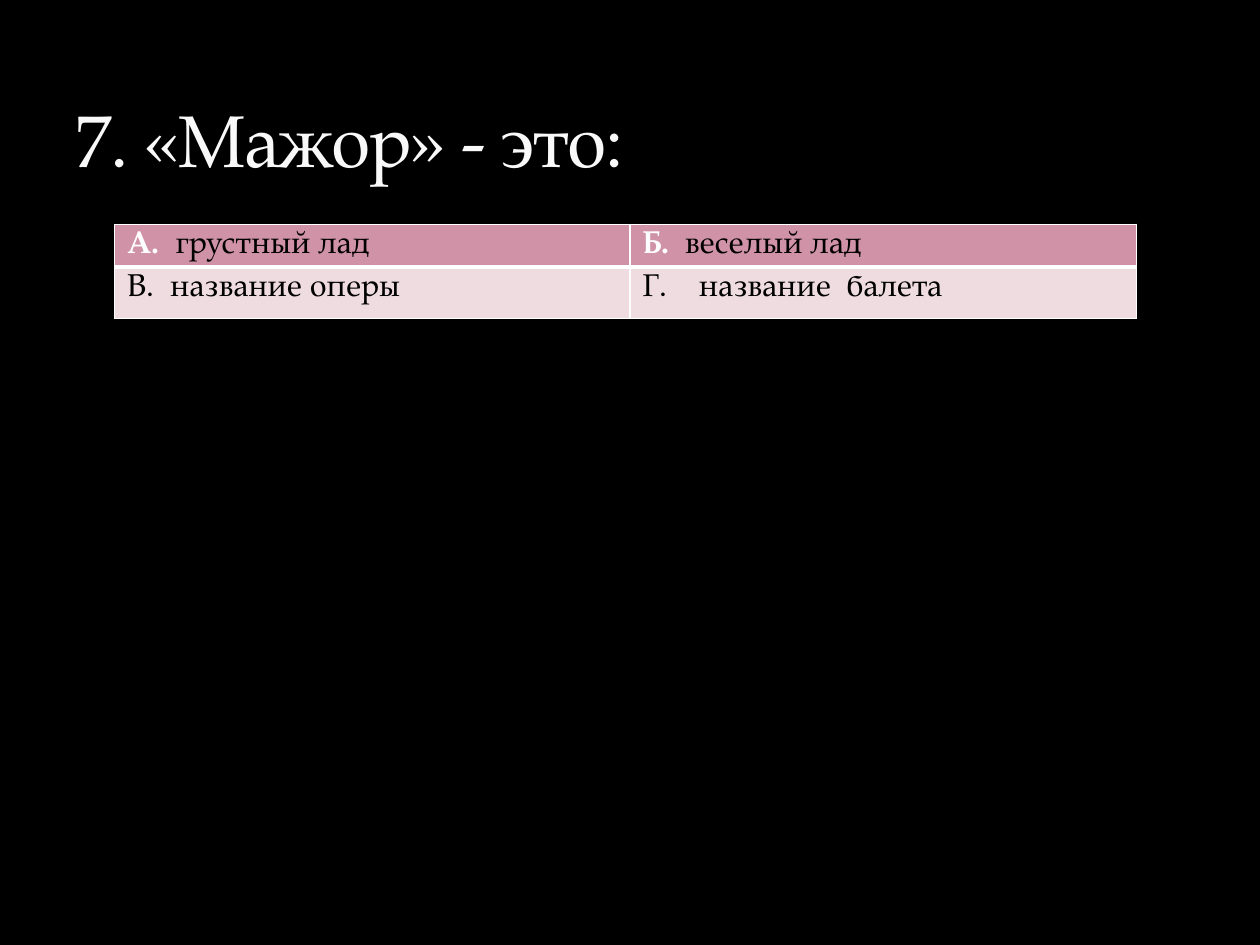
from dataclasses import dataclass

from lxml import etree
from pptx import Presentation
from pptx import util as u
from pptx.dml.color import RGBColor
from pptx.enum import text
from pptx.oxml.ns import qn

FONT = "TeX Gyre Pagella"
BLACK = RGBColor(0x00, 0x00, 0x00)
WHITE = RGBColor(0xFF, 0xFF, 0xFF)
TITLE_WHITE = RGBColor(0xF9, 0xF9, 0xF9)
TITLE_OUTLINE = RGBColor(0x3C, 0x44, 0x22)
ROSE = RGBColor(0xD0, 0x92, 0xA7)
PALE_ROSE = RGBColor(0xEE, 0xDC, 0xE1)


@dataclass(frozen=True)
class Answer:
    label: str
    wording: str


@dataclass(frozen=True)
class AnswerRow:
    answers: tuple[Answer, ...]
    height: float
    fill: RGBColor
    label_color: RGBColor
    label_bold: bool
    bottom_border: float


COLUMN_WIDTHS = (4.09, 4.02)
ROWS = (
    AnswerRow((Answer("A.  ", "грустный лад"), Answer("Б.  ", "веселый лад")),
              0.34, ROSE, WHITE, True, 3),
    AnswerRow((Answer("B.  ", "название оперы"), Answer("Г.    ", "название  балета")),
              0.41, PALE_ROSE, BLACK, False, 1),
)


def add_text(paragraph, wording: str, *, size: float = 18,
             color: RGBColor = BLACK, bold: bool = False):
    run = paragraph.add_run()
    run.text = wording
    run.font.name = FONT
    run.font.size = u.Pt(size)
    run.font.bold = bold
    run.font.color.rgb = color
    return run


def add_solid_fill(parent, color: RGBColor):
    fill = etree.SubElement(parent, qn("a:solidFill"))
    return etree.SubElement(fill, qn("a:srgbClr"), val=str(color))


def set_borders(cell, widths: dict[str, float]) -> None:
    properties = cell._tc.get_or_add_tcPr()
    for position, (side, width) in enumerate(widths.items()):
        border = etree.Element(qn(f"a:ln{side}"), w=str(u.Pt(width)))
        add_solid_fill(border, WHITE)
        properties.insert(position, border)


def draw_title(slide, wording: str) -> None:
    title = slide.shapes.title
    title.left, title.top = u.Inches(0.5), u.Inches(0.17)
    title.width, title.height = u.Inches(9), u.Inches(1.33)
    frame = title.text_frame
    frame.word_wrap = True
    frame.vertical_anchor = text.MSO_ANCHOR.BOTTOM
    frame.paragraphs[0].alignment = text.PP_ALIGN.LEFT
    run = add_text(frame.paragraphs[0], wording, size=42, color=TITLE_WHITE)
    properties = run.font._element
    properties.set("spc", "-100")
    outline = etree.Element(qn("a:ln"), w=str(u.Pt(0.25)))
    outline_color = add_solid_fill(outline, TITLE_OUTLINE)
    etree.SubElement(outline_color, qn("a:alpha"), val="25000")
    properties.insert(0, outline)


def draw_cell(cell, answer: Answer, row: AnswerRow, top_border: float) -> None:
    cell.margin_top = u.Inches(0.05)
    cell.margin_bottom = 0
    cell.fill.solid()
    cell.fill.fore_color.rgb = row.fill
    paragraph = cell.text_frame.paragraphs[0]
    add_text(paragraph, answer.label, color=row.label_color, bold=row.label_bold)
    add_text(paragraph, answer.wording)
    set_borders(cell, {"L": 1, "R": 1, "T": top_border, "B": row.bottom_border})


def draw_answers(slide, rows: tuple[AnswerRow, ...]) -> None:
    answers = slide.shapes.add_table(
        len(rows), len(COLUMN_WIDTHS), u.Inches(0.91), u.Inches(1.78),
        u.Inches(sum(COLUMN_WIDTHS)), u.Inches(sum(row.height for row in rows))).table
    for column, width in zip(answers.columns, COLUMN_WIDTHS):
        column.width = u.Inches(width)
    top_border = 1
    for row_index, row in enumerate(rows):
        answers.rows[row_index].height = u.Inches(row.height)
        for column_index, answer in enumerate(row.answers):
            draw_cell(answers.cell(row_index, column_index), answer, row, top_border)
        top_border = row.bottom_border


def main() -> None:
    deck = Presentation()
    deck.slide_width, deck.slide_height = u.Inches(10), u.Inches(7.5)
    slide = deck.slides.add_slide(deck.slide_layouts[5])
    slide.background.fill.solid()
    slide.background.fill.fore_color.rgb = BLACK
    draw_answers(slide, ROWS)
    draw_title(slide, "7. «Мажор» - это:")
    deck.save("out.pptx")


if __name__ == "__main__":
    main()
